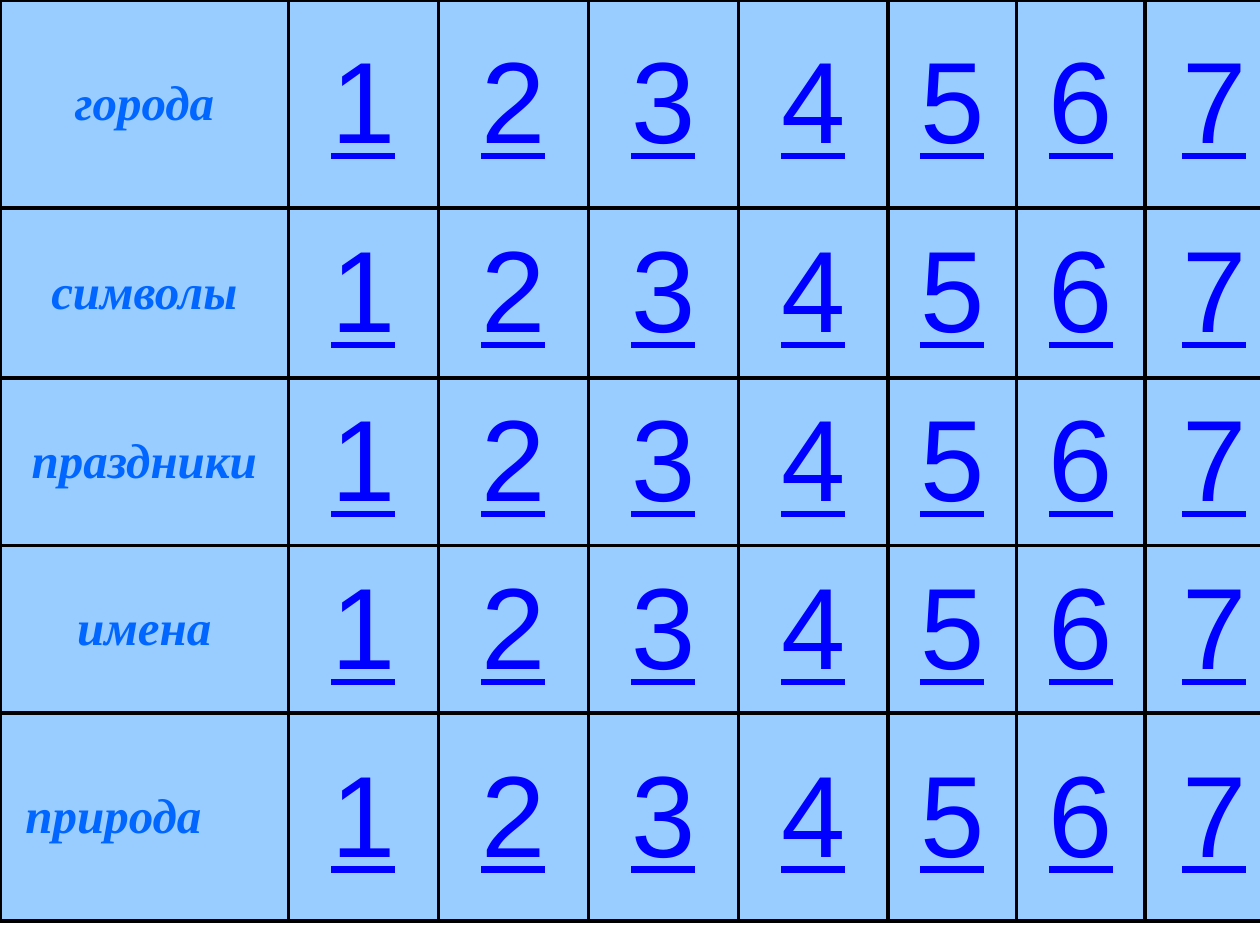
from pptx import Presentation
from pptx.dml.color import RGBColor
from pptx.enum.text import MSO_ANCHOR as Anchor, PP_ALIGN as Align
from pptx.oxml import parse_xml
from pptx.oxml.ns import nsdecls
from pptx.util import Inches, Pt

COLORS = {"cell": "99CCFF", "topic": "0066FF", "number": "0000FF", "border": "000000"}
TOPICS = ["города", "символы", "праздники", "имена", "природа"]
NUMBERS = range(1, 8)
COLUMN_WIDTHS = [2.29] + [1.19] * 4 + [1.02] * 2 + [1.1]
ROW_HEIGHTS = [1.65, 1.35, 1.33, 1.33, 1.65]
TOPIC_FONT = {"name": "Times New Roman", "size": Pt(28), "bold": True, "italic": True}
NUMBER_FONT = {"name": "Arial", "size": Pt(66), "underline": True}
MARGINS = ("margin_left", "margin_top", "margin_right", "margin_bottom")


def add_borders(cell):
    # Borders come before the fill in the cell properties
    properties = cell._tc.get_or_add_tcPr()
    for position, side in enumerate(("lnL", "lnR", "lnT", "lnB")):
        properties.insert(position, parse_xml(
            f'<a:{side} {nsdecls("a")} w="{Pt(2.25)}"><a:solidFill>'
            f'<a:srgbClr val="{COLORS["border"]}"/></a:solidFill></a:{side}>'))


def fill_cell(cell, text, font_format, color):
    cell.fill.solid()
    cell.fill.fore_color.rgb = RGBColor.from_string(COLORS["cell"])
    add_borders(cell)
    for margin in MARGINS:
        setattr(cell, margin, 0)
    cell.vertical_anchor = Anchor.MIDDLE
    paragraph = cell.text_frame.paragraphs[0]
    paragraph.alignment = Align.CENTER
    run = paragraph.add_run()
    run.text = text
    for attribute, value in font_format.items():
        setattr(run.font, attribute, value)
    run.font.color.rgb = RGBColor.from_string(COLORS[color])


def add_game_board(slide):
    board = slide.shapes.add_table(
        len(ROW_HEIGHTS), len(COLUMN_WIDTHS), 0, 0,
        Inches(sum(COLUMN_WIDTHS)), Inches(sum(ROW_HEIGHTS))).table
    board.first_row = board.horz_banding = False
    for column, width in zip(board.columns, COLUMN_WIDTHS):
        column.width = Inches(width)
    for row, height in zip(board.rows, ROW_HEIGHTS):
        row.height = Inches(height)

    # One topic per row, followed by its question numbers
    for row, topic in enumerate(TOPICS):
        fill_cell(board.cell(row, 0), topic, TOPIC_FONT, "topic")
        for number in NUMBERS:
            fill_cell(board.cell(row, number), str(number), NUMBER_FONT, "number")

    # The last topic sits left of centre
    board.cell(len(TOPICS) - 1, 0).margin_right = Inches(0.49)


def main():
    presentation = Presentation()
    presentation.slide_width = Inches(10)
    presentation.slide_height = Inches(7.5)
    slide = presentation.slides.add_slide(presentation.slide_layouts[6])
    add_game_board(slide)
    presentation.save("out.pptx")


if __name__ == "__main__":
    main()
